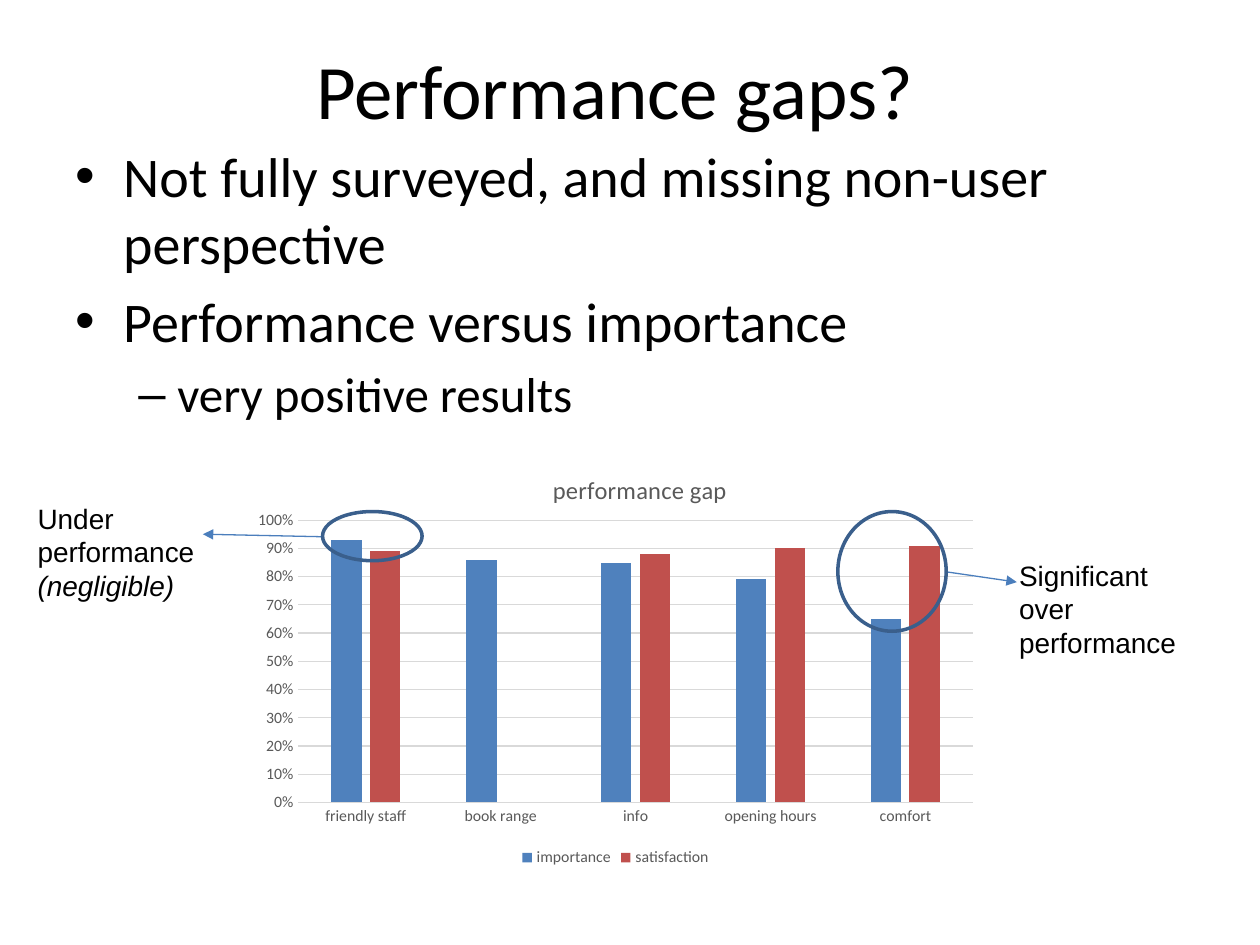
from dataclasses import dataclass
from typing import Optional

from lxml import etree
from pptx import Presentation
from pptx.chart.data import CategoryChartData
from pptx.dml.color import RGBColor
from pptx.enum import chart as charts, shapes, text
from pptx.oxml import parse_xml
from pptx.oxml.ns import nsdecls, qn
from pptx.util import Inches, Pt


@dataclass(frozen=True)
class Theme:
    heading_font: str = "Calibri"
    note_font: str = "Arial"
    ink: RGBColor = RGBColor(0, 0, 0)
    chart_ink: RGBColor = RGBColor(0x59, 0x59, 0x59)
    grid: RGBColor = RGBColor(0xD9, 0xD9, 0xD9)
    arrow: RGBColor = RGBColor(0x4B, 0x7E, 0xBC)
    ring: RGBColor = RGBColor(0x3A, 0x5F, 0x8C)
    importance: RGBColor = RGBColor(0x4F, 0x81, 0xBD)
    satisfaction: RGBColor = RGBColor(0xC0, 0x50, 0x4D)
    title_size: int = 44
    bullet_sizes: tuple[int, int] = (32, 28)
    note_size: int = 16
    chart_title_size: int = 14
    chart_size: int = 9


THEME = Theme()


@dataclass(frozen=True)
class Box:
    left: float
    top: float
    width: float
    height: float

    def lengths(self):
        return [Inches(v) for v in (self.left, self.top, self.width, self.height)]


@dataclass(frozen=True)
class Bullet:
    words: str
    level: int = 0


@dataclass(frozen=True)
class Callout:
    """A ringed group of bars, its arrow and its note."""
    ring: Box
    arrow_start: tuple[float, float]
    arrow_end: tuple[float, float]
    note: Box
    words: str
    aside: Optional[str] = None


BULLETS = [
    Bullet("Not fully surveyed, and missing non-user perspective"),
    Bullet("Performance versus importance"),
    Bullet("very positive results", 1),
]
BULLET_MARKS = [("•", 0.38, 0.38), ("–", 0.81, 0.31)]  # mark, margin, hanging

CALLOUTS = [
    Callout(Box(2.56, 4.06, 0.79, 0.39), (2.56, 4.26), (1.61, 4.24),
            Box(0.2, 3.93, 1.51, 0.91), "Under performance", "(negligible)"),
    Callout(Box(6.65, 4.06, 0.86, 0.95), (7.52, 4.54), (8.07, 4.62),
            Box(7.99, 4.38, 1.51, 0.91), "Significant over performance"),
]

CATEGORIES = ["friendly staff", "book range", "info", "opening hours", "comfort"]
SERIES = [
    ("importance", [0.93, 0.86, 0.85, 0.79, 0.65], THEME.importance),
    ("satisfaction", [0.89, None, 0.88, 0.9, 0.91], THEME.satisfaction),
]


def style_font(font, name: str, size: float, color: RGBColor) -> None:
    font.name, font.size = name, Pt(size)
    font.color.rgb = color


def add_text(slide, box: Box, lines: list[str], font: str, size: int):
    frame = slide.shapes.add_textbox(*box.lengths()).text_frame
    frame.word_wrap = True
    frame.text = "\n".join(lines)
    for paragraph in frame.paragraphs:
        for run in paragraph.runs:
            style_font(run.font, font, size, THEME.ink)
    return frame


def add_title(slide) -> None:
    frame = add_text(slide, Box(0.51, 0.08, 9, 1.25), ["Performance gaps?\t"],
                     THEME.heading_font, THEME.title_size)
    frame.vertical_anchor = text.MSO_ANCHOR.MIDDLE
    frame.paragraphs[0].alignment = text.PP_ALIGN.CENTER


def add_bullets(slide) -> None:
    frame = add_text(slide, Box(0.5, 1.07, 9, 4.95), [b.words for b in BULLETS],
                     THEME.heading_font, THEME.bullet_sizes[0])
    for paragraph, bullet in zip(frame.paragraphs, BULLETS):
        size = THEME.bullet_sizes[bullet.level]
        mark, margin, hanging = BULLET_MARKS[bullet.level]
        paragraph.level = bullet.level
        paragraph.space_before = Pt(0.2 * size)
        paragraph.runs[0].font.size = Pt(size)
        properties = paragraph._p.get_or_add_pPr()
        properties.set("marL", str(Inches(margin)))
        properties.set("indent", str(-Inches(hanging)))
        etree.SubElement(properties, qn("a:buFont")).set("typeface", "Arial")
        etree.SubElement(properties, qn("a:buChar")).set("char", mark)


def place_chart_title(title, left: float, top: float) -> None:
    """Put the chart title at a fraction of the chart's width and height."""
    element = title._element
    for layout in element.findall(qn("c:layout")):
        element.remove(layout)
    element.find(qn("c:tx")).addnext(parse_xml(
        f'<c:layout {nsdecls("c")}><c:manualLayout><c:xMode val="edge"/>'
        f'<c:yMode val="edge"/><c:x val="{left}"/><c:y val="{top}"/>'
        '</c:manualLayout></c:layout>'))


def add_gap_chart(slide) -> None:
    data = CategoryChartData(number_format="0%")
    data.categories = CATEGORIES
    for name, values, _ in SERIES:
        data.add_series(name, values)
    chart = slide.shapes.add_chart(charts.XL_CHART_TYPE.COLUMN_CLUSTERED,
                                   *Box(1.93, 3.51, 5.91, 3.41).lengths(), data).chart
    style_font(chart.font, THEME.heading_font, THEME.chart_size, THEME.chart_ink)

    chart.has_title = True
    heading = chart.chart_title.text_frame
    heading.text = "performance gap"
    heading_font = heading.paragraphs[0].runs[0].font
    style_font(heading_font, THEME.heading_font, THEME.chart_title_size, THEME.chart_ink)
    heading_font.bold = False
    place_chart_title(chart.chart_title, 0.41, 0.06)

    chart.has_legend = True
    chart.legend.position = charts.XL_LEGEND_POSITION.BOTTOM
    chart.legend.include_in_layout = False

    plot = chart.plots[0]
    plot.gap_width, plot.overlap, plot.vary_by_categories = 219, -27, False
    for series, (_, _, color) in zip(plot.series, SERIES):
        series.format.fill.solid()
        series.format.fill.fore_color.rgb = color
        series.invert_if_negative = False

    scale = chart.value_axis
    scale.minimum_scale, scale.maximum_scale, scale.major_unit = 0, 1, 0.1
    scale.tick_labels.number_format = "0%"
    scale.tick_labels.number_format_is_linked = False
    scale.format.line.fill.background()
    for line in (scale.major_gridlines.format.line, chart.category_axis.format.line):
        line.color.rgb = THEME.grid
        line.width = Pt(0.75)
    for axis in (scale, chart.category_axis):
        axis.major_tick_mark = axis.minor_tick_mark = charts.XL_TICK_MARK.NONE


def add_arrow(slide, start: tuple[float, float], end: tuple[float, float]) -> None:
    arrow = slide.shapes.add_connector(shapes.MSO_CONNECTOR.STRAIGHT,
                                       *[Inches(v) for v in start + end])
    arrow.line.color.rgb = THEME.arrow
    arrow.line.width = Pt(0.75)
    etree.SubElement(arrow.line._get_or_add_ln(), qn("a:tailEnd")).set("type", "triangle")
    etree.SubElement(arrow._element.spPr, qn("a:effectLst"))


def add_callout(slide, callout: Callout) -> None:
    lines = [callout.words] + ([callout.aside] if callout.aside else [])
    note = add_text(slide, callout.note, lines, THEME.note_font, THEME.note_size)
    if callout.aside:
        note.paragraphs[1].runs[0].font.italic = True
    add_arrow(slide, callout.arrow_start, callout.arrow_end)
    ring = slide.shapes.add_shape(shapes.MSO_SHAPE.OVAL, *callout.ring.lengths())
    ring.shadow.inherit = False
    ring.fill.background()
    ring.line.color.rgb = THEME.ring
    ring.line.width = Pt(2)


def main() -> None:
    deck = Presentation()
    deck.slide_width, deck.slide_height = Inches(10), Inches(7.5)
    slide = deck.slides.add_slide(deck.slide_layouts[6])
    add_title(slide)
    add_bullets(slide)
    add_gap_chart(slide)
    for callout in CALLOUTS:
        add_callout(slide, callout)
    deck.save("out.pptx")


if __name__ == "__main__":
    main()
